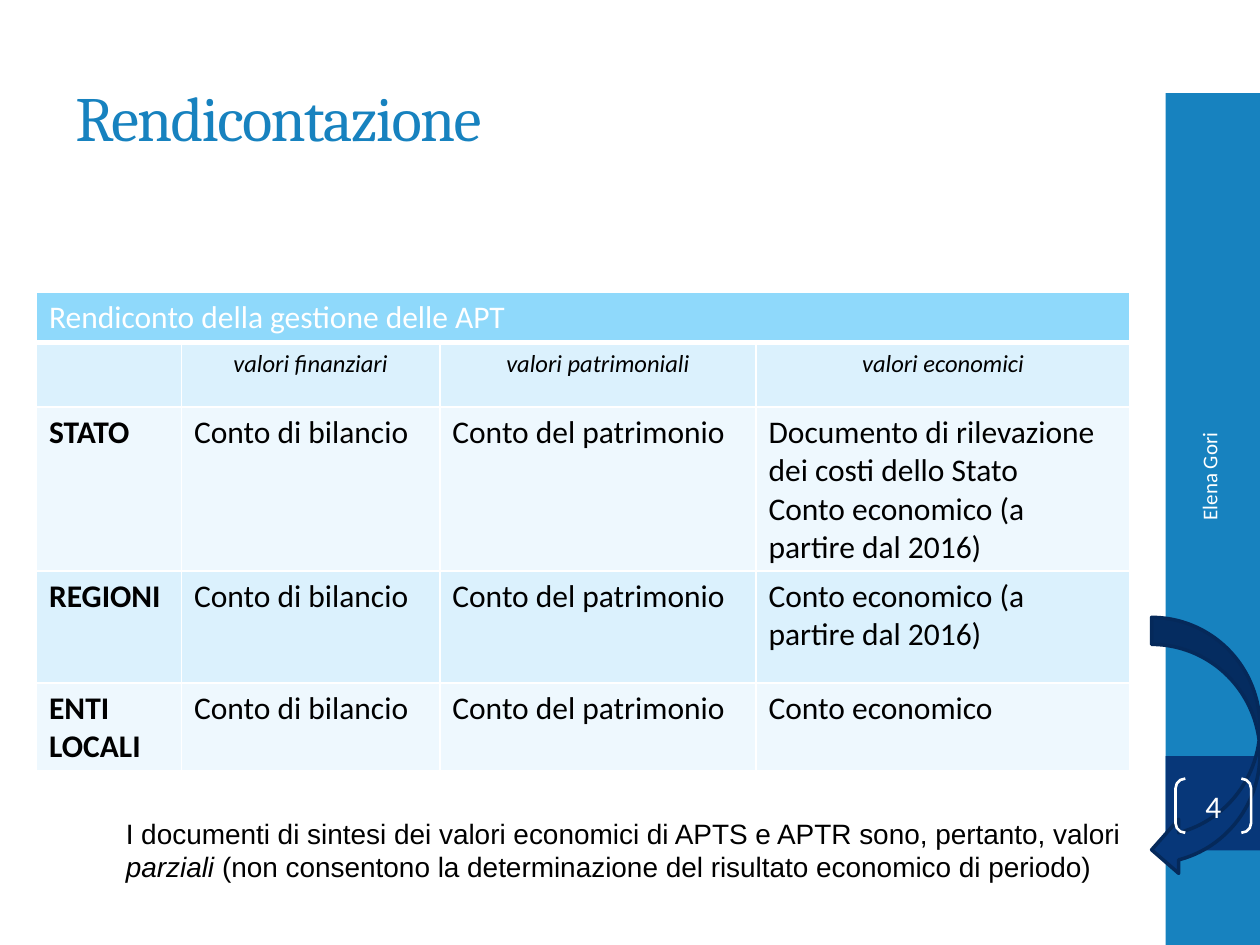
from typing import NamedTuple, Optional

from lxml.etree import SubElement
from pptx import Presentation
from pptx.dml.color import RGBColor
from pptx.enum.shapes import MSO_SHAPE as Preset
from pptx.enum.text import MSO_ANCHOR as Anchor, PP_ALIGN as Align
from pptx.oxml.ns import qn
from pptx.util import Emu, Pt

PX = 9144  # EMU in one px, at 100 px to the inch

BLUE, NAVY, NAVY_LINE = "1782BF", "073779", "05295A"
HEADER, BAND_DARK, BAND_LIGHT = "8FD9FB", "DBF1FD", "EEF8FE"
WHITE, BLACK = "FFFFFF", "000000"


class Box(NamedTuple):
    left: int
    top: int
    width: int
    height: int

    def emu(self) -> list[Emu]:
        return [px(length) for length in self]


class Style(NamedTuple):
    font: str
    size: int
    color: str
    align: Align = Align.LEFT
    bold: bool = False
    italic: bool = False


class Figure(NamedTuple):
    preset: Preset
    box: Box
    fill: Optional[str] = None
    line: Optional[str] = None
    line_width: float = 0


SIDEBAR = Figure(Preset.RECTANGLE, Box(925, 74, 75, 676), BLUE)
NUMBER_SQUARE = Figure(Preset.RECTANGLE, Box(925, 600, 75, 75), NAVY)
ARROW = Figure(Preset.CURVED_LEFT_ARROW, Box(914, 490, 86, 206), NAVY, NAVY_LINE, 2)
BRACKETS = Figure(Preset.DOUBLE_BRACKET, Box(933, 618, 60, 43), None, WHITE, 1.5)

TITLE = Style("Cambria", 36, BLUE)
NOTE = Style("Arial", 16, BLACK)
AUTHOR = Style("Calibri", 12, WHITE, Align.RIGHT)
NUMBER = Style("Calibri", 18, WHITE, Align.CENTER)
TABLE_HEADER = Style("Calibri", 18, WHITE)
COLUMN_HEADER = Style("Calibri", 14, BLACK, Align.CENTER, italic=True)
BODY = Style("Calibri", 18, BLACK)
ROW_HEADER = BODY._replace(bold=True)

COLUMN_WIDTHS = [115, 205, 251, 297]
ROW_HEIGHTS = [36, 51, 116, 89, 62]
FINANCIAL, ASSETS = "Conto di bilancio", "Conto del patrimonio"
INCOME = "Conto economico"
INCOME_2016 = f"{INCOME} (a partire dal 2016)"
ROWS = [
    ["Rendiconto della gestione delle APT", "", "", ""],
    ["", "valori finanziari", "valori patrimoniali", "valori economici"],
    ["STATO", FINANCIAL, ASSETS,
     f"Documento di rilevazione dei costi dello Stato\n{INCOME_2016}"],
    ["REGIONI", FINANCIAL, ASSETS, INCOME_2016],
    ["ENTI LOCALI", FINANCIAL, ASSETS, INCOME],
]
NOTE_PARTS = [
    "I documenti di sintesi dei valori economici di APTS e APTR sono, pertanto, valori ",
    "parziali",
    " (non consentono la determinazione del risultato economico di periodo)",
]


def px(length: int) -> Emu:
    return Emu(length * PX)


def rgb(color: str) -> RGBColor:
    return RGBColor.from_string(color)


def format_text(text_frame, style: Style) -> None:
    for paragraph in text_frame.paragraphs:
        paragraph.alignment = style.align
        for run in paragraph.runs:
            run.font.name = style.font
            run.font.size = Pt(style.size)
            run.font.color.rgb = rgb(style.color)
            run.font.bold = style.bold
            run.font.italic = style.italic


def add_figure(slide, figure: Figure):
    shape = slide.shapes.add_shape(figure.preset, *figure.box.emu())
    shape.shadow.inherit = False
    if figure.fill:
        shape.fill.solid()
        shape.fill.fore_color.rgb = rgb(figure.fill)
    else:
        shape.fill.background()
    if figure.line:
        shape.line.color.rgb = rgb(figure.line)
        shape.line.width = Pt(figure.line_width)
    else:
        shape.line.fill.background()
    return shape


def add_text(slide, box: Box, text: str, style: Style, anchor: Anchor = Anchor.MIDDLE):
    shape = slide.shapes.add_textbox(*box.emu())
    text_frame = shape.text_frame
    text_frame.word_wrap = True
    text_frame.vertical_anchor = anchor
    text_frame.text = text
    format_text(text_frame, style)
    return shape


def add_note(slide) -> None:
    shape = add_text(slide, Box(90, 643, 858, 64), "", NOTE, Anchor.TOP)
    paragraph = shape.text_frame.paragraphs[0]
    for part in NOTE_PARTS:
        paragraph.add_run().text = part
    format_text(shape.text_frame, NOTE)
    paragraph.runs[1].font.italic = True


def set_borders(cell, bottom_width: int) -> None:
    properties = cell._tc.get_or_add_tcPr()
    for side, width in (("L", 1), ("R", 1), ("T", 1), ("B", bottom_width)):
        line = SubElement(properties, qn(f"a:ln{side}"), w=str(Pt(width)))
        SubElement(SubElement(line, qn("a:solidFill")), qn("a:srgbClr"), val=WHITE)


def cell_style(row: int, column: int) -> Style:
    if row == 0:
        return TABLE_HEADER
    if row == 1:
        return COLUMN_HEADER
    return ROW_HEADER if column == 0 else BODY


def add_report_table(slide) -> None:
    box = Box(29, 232, sum(COLUMN_WIDTHS), sum(ROW_HEIGHTS))
    table = slide.shapes.add_table(len(ROWS), len(COLUMN_WIDTHS), *box.emu()).table
    for column, width in zip(table.columns, COLUMN_WIDTHS):
        column.width = px(width)
    for row, height in zip(table.rows, ROW_HEIGHTS):
        row.height = px(height)
    table.cell(0, 0).merge(table.cell(0, len(COLUMN_WIDTHS) - 1))

    for row, texts in enumerate(ROWS):
        fill = HEADER if row == 0 else (BAND_DARK if row % 2 else BAND_LIGHT)
        for column, text in enumerate(texts):
            cell = table.cell(row, column)
            set_borders(cell, 3 if row == 0 else 1)
            cell.fill.solid()
            cell.fill.fore_color.rgb = rgb(fill)
            if text:
                cell.text_frame.text = text
                format_text(cell.text_frame, cell_style(row, column))


def add_slide_number(slide) -> None:
    shape = add_figure(slide, BRACKETS)
    shape.adjustments[0] = 0.18
    text_frame = shape.text_frame
    text_frame.margin_left = text_frame.margin_right = 0
    text_frame.margin_top = text_frame.margin_bottom = 0
    text_frame.vertical_anchor = Anchor.MIDDLE
    text_frame.text = "4"
    format_text(text_frame, NUMBER)


def main() -> None:
    presentation = Presentation()
    presentation.slide_width, presentation.slide_height = px(1000), px(750)
    slide = presentation.slides.add_slide(presentation.slide_layouts[6])

    add_figure(slide, SIDEBAR)
    add_figure(slide, NUMBER_SQUARE)
    add_note(slide)
    add_figure(slide, ARROW)
    title = add_text(slide, Box(50, 30, 833, 125), "Rendicontazione", TITLE)
    title_run = title.text_frame.paragraphs[0].runs[0]
    title_run.font._element.set("spc", "-100")
    add_report_table(slide)
    add_text(slide, Box(830, 443, 259, 40), "Elena Gori", AUTHOR).rotation = 270
    add_slide_number(slide)

    presentation.save("out.pptx")


if __name__ == "__main__":
    main()
